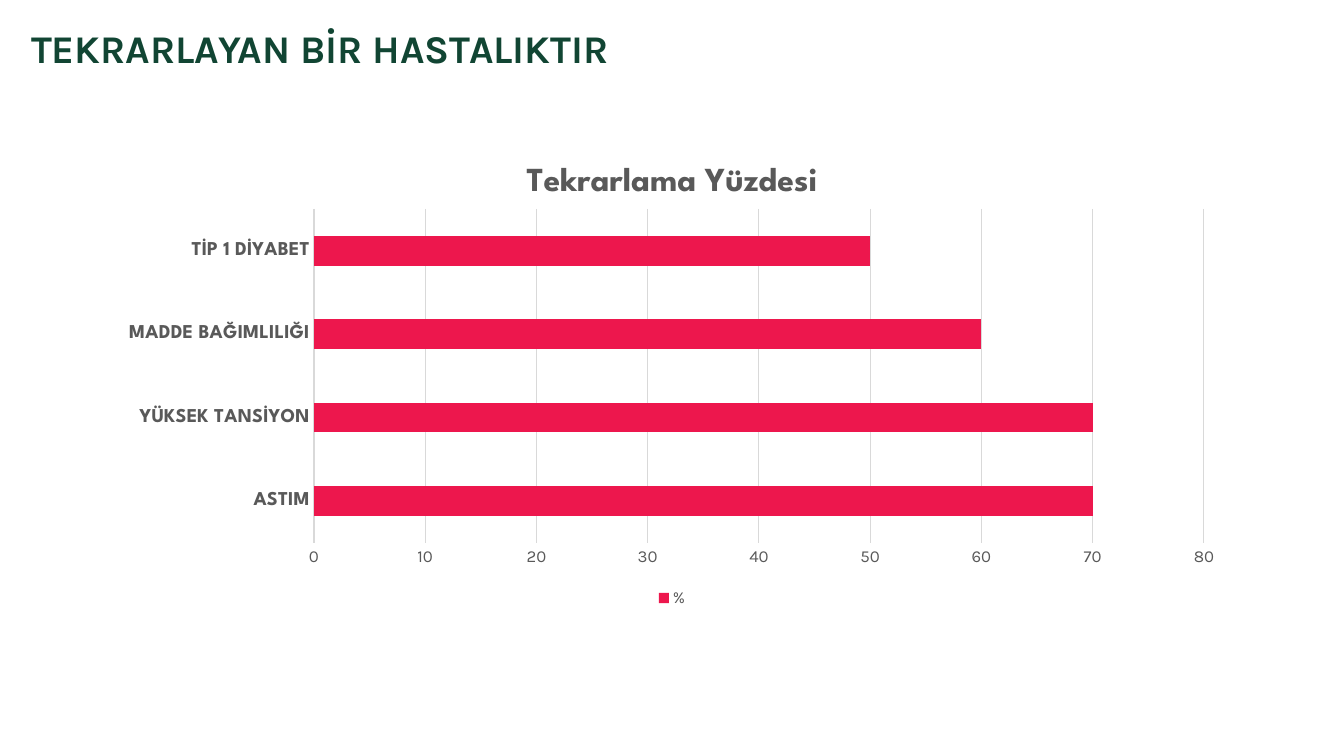
from lxml import etree
from pptx import Presentation
from pptx.chart.data import CategoryChartData
from pptx.dml.color import RGBColor
from pptx.enum.chart import XL_CHART_TYPE, XL_LEGEND_POSITION, XL_TICK_MARK
from pptx.enum.text import MSO_ANCHOR, PP_ALIGN
from pptx.oxml.ns import qn
from pptx.util import Inches, Pt

BAR_CLUSTERED = XL_CHART_TYPE.BAR_CLUSTERED
LEGEND_BOTTOM = XL_LEGEND_POSITION.BOTTOM
NO_TICK = XL_TICK_MARK.NONE
ANCHOR_TOP = MSO_ANCHOR.TOP
ALIGN_LEFT = PP_ALIGN.LEFT

SLIDE_WIDTH, SLIDE_HEIGHT = 1344, 756
SCALE = Inches(7.5) / SLIDE_HEIGHT
TITLE_BOX = (21, 19, 1066, 57)
CHART_BOX = (107, 144, 1130, 468)
PLOT_BOX = (314, 209, 890, 334)

GREEN = RGBColor(0x11, 0x45, 0x33)
RED = RGBColor(0xED, 0x17, 0x4D)
GRAY = RGBColor(0x59, 0x59, 0x59)
LIGHT_GRAY = RGBColor(0xD9, 0xD9, 0xD9)
BODY_FONT = "Karla"
DISPLAY_FONT = "League Spartan"

RELAPSE_RATES = {
    "ASTIM": 70,
    "YÜKSEK TANSİYON": 70,
    "MADDE BAĞIMLILIĞI": 60,
    "TİP 1 DİYABET": 50,
}


def px(length):
    """Turn pixels into EMU."""
    return round(length * SCALE)


def style_font(font, name, size, color, bold=False):
    """Set the face, size, colour and weight of a font."""
    font.name = name
    font.size = Pt(size)
    font.color.rgb = color
    font.bold = bold


def style_line(line):
    """Draw a thin light gray line."""
    line.color.rgb = LIGHT_GRAY
    line.width = Pt(0.75)


def add_title(slide, box, text):
    """Move the title placeholder into the box and fill it."""
    title = slide.shapes.title
    title.left, title.top, title.width, title.height = map(px, box)
    frame = title.text_frame
    frame.word_wrap = True
    frame.vertical_anchor = ANCHOR_TOP
    paragraph = frame.paragraphs[0]
    paragraph.alignment = ALIGN_LEFT
    paragraph.line_spacing = 1.0
    run = paragraph.add_run()
    run.text = text
    style_font(run.font, BODY_FONT, 28, GREEN, True)


def place_plot(chart, chart_box, plot_box):
    """Fix the inner plot area as fractions of the chart box."""
    left, top, width, height = chart_box
    plot_left, plot_top, plot_width, plot_height = plot_box
    settings = {
        "layoutTarget": "inner",
        "xMode": "edge",
        "yMode": "edge",
        "x": (plot_left - left) / width,
        "y": (plot_top - top) / height,
        "w": plot_width / width,
        "h": plot_height / height,
    }
    plot_area = chart.element.find(".//" + qn("c:plotArea"))
    layout = plot_area.find(qn("c:layout"))
    if layout is None:
        layout = etree.Element(qn("c:layout"))
        plot_area.insert(0, layout)
    manual = etree.SubElement(layout, qn("c:manualLayout"))
    for name, value in settings.items():
        etree.SubElement(manual, qn("c:" + name)).set("val", str(value))


def style_axes(chart):
    """Format the category and value axes."""
    category_axis, value_axis = chart.category_axis, chart.value_axis
    for axis in (category_axis, value_axis):
        axis.major_tick_mark = NO_TICK
        axis.minor_tick_mark = NO_TICK
    style_font(category_axis.tick_labels.font, DISPLAY_FONT, 14, GRAY, True)
    style_line(category_axis.format.line)
    style_font(value_axis.tick_labels.font, BODY_FONT, 12, GRAY)
    value_axis.format.line.fill.background()
    value_axis.minimum_scale, value_axis.maximum_scale = 0, 80
    value_axis.major_unit = 10
    value_axis.has_major_gridlines = True
    style_line(value_axis.major_gridlines.format.line)


def add_relapse_chart(slide, box, plot_box):
    """Add the bar chart of relapse rates in the box."""
    data = CategoryChartData()
    data.categories = list(RELAPSE_RATES)
    data.add_series("%", list(RELAPSE_RATES.values()))
    chart = slide.shapes.add_chart(BAR_CLUSTERED, *map(px, box), data).chart
    chart.font.name = BODY_FONT
    chart.font.size = Pt(10)

    chart.has_title = True
    run = chart.chart_title.text_frame.paragraphs[0].add_run()
    run.text = "Tekrarlama Yüzdesi"
    style_font(run.font, DISPLAY_FONT, 24, GRAY, True)
    chart.chart_title.include_in_layout = False

    chart.has_legend = True
    chart.legend.position = LEGEND_BOTTOM
    chart.legend.include_in_layout = False
    style_font(chart.legend.font, BODY_FONT, 12, GRAY)

    plot = chart.plots[0]
    plot.gap_width = 182
    plot.vary_by_categories = False
    fill = plot.series[0].format.fill
    fill.solid()
    fill.fore_color.rgb = RED
    style_axes(chart)
    place_plot(chart, box, plot_box)


def main():
    """Build and save the presentation."""
    presentation = Presentation()
    presentation.slide_width = px(SLIDE_WIDTH)
    presentation.slide_height = px(SLIDE_HEIGHT)
    slide = presentation.slides.add_slide(presentation.slide_layouts[5])
    add_title(slide, TITLE_BOX, "TEKRARLAYAN BİR HASTALIKTIR")
    add_relapse_chart(slide, CHART_BOX, PLOT_BOX)
    presentation.save("out.pptx")


if __name__ == "__main__":
    main()
